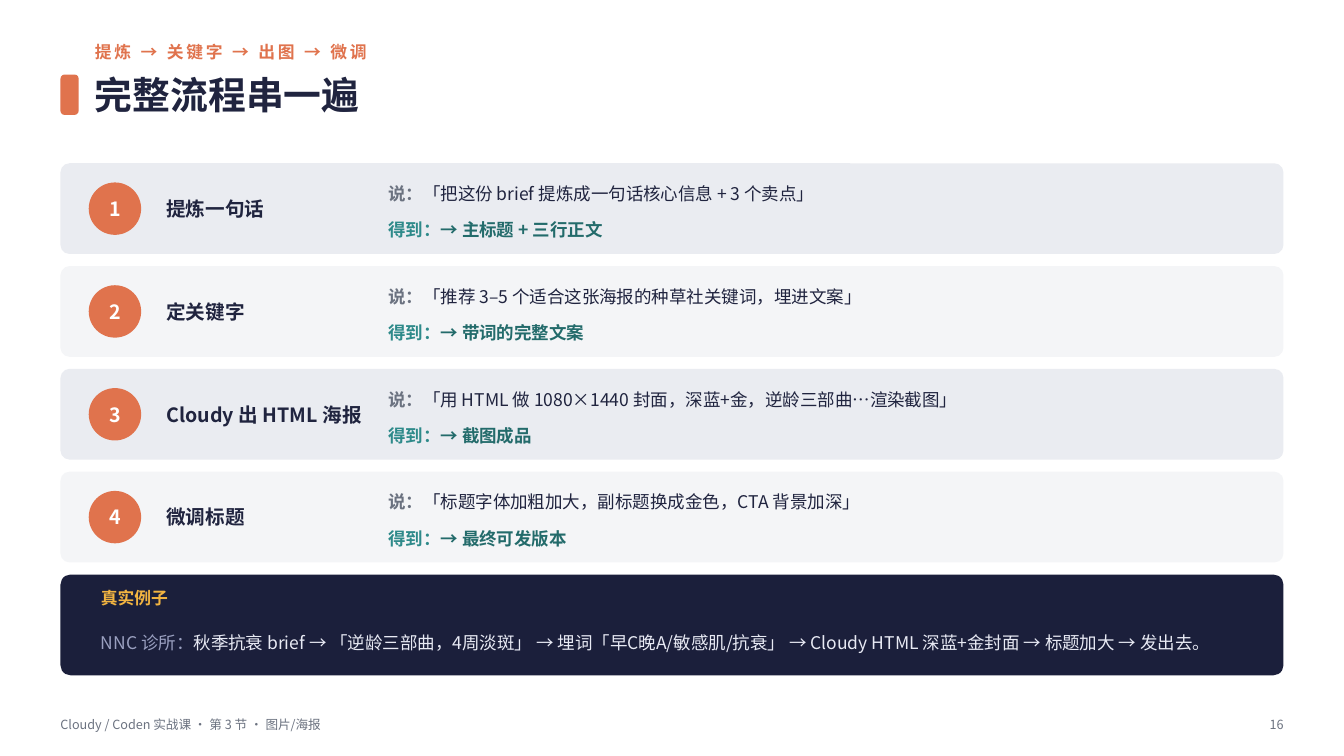
import pptx
import pptx.util
import pptx.dml.color
import pptx.enum.shapes
import pptx.enum.text
import pptx.oxml
import pptx.oxml.ns

Inches = pptx.util.Inches
RGBColor = pptx.dml.color.RGBColor
SHAPE = pptx.enum.shapes.MSO_SHAPE
ALIGN = pptx.enum.text.PP_ALIGN

FONT = "Noto Sans CJK SC"
ORANGE = RGBColor(0xE0, 0x73, 0x4D)
INK = RGBColor(0x20, 0x24, 0x3F)
WHITE = RGBColor(0xFF, 0xFF, 0xFF)
GRAY = RGBColor(0x6B, 0x72, 0x80)
TEAL = RGBColor(0x2E, 0x8A, 0x8A)
DARK_TEAL = RGBColor(0x23, 0x6B, 0x6B)
ROW_FILLS = [RGBColor(0xEA, 0xEC, 0xF1), RGBColor(0xF4, 0xF5, 0xF7)]
NAVY = RGBColor(0x1B, 0x1F, 0x3B)
GOLD = RGBColor(0xF2, 0xB4, 0x41)
LAVENDER = RGBColor(0x9A, 0xA0, 0xC0)
PALE = RGBColor(0xE8, 0xEA, 0xF4)

LEFT, WIDTH = 0.6, 12.13
ROW_TOP, ROW_HEIGHT, ROW_STEP = 1.62, 0.9, 1.02
CIRCLE = 0.52

prs = pptx.Presentation()
prs.slide_width, prs.slide_height = Inches(13.33), Inches(7.5)
s = prs.slides.add_slide(prs.slide_layouts[6])


def add_block(kind, x, y, w, h, fill, corner=None):
    sp = s.shapes.add_shape(kind, Inches(x), Inches(y), Inches(w), Inches(h))
    sp.shadow.inherit = False
    sp.fill.solid()
    sp.fill.fore_color.rgb = fill
    sp.line.fill.background()
    if corner is not None:
        sp.adjustments[0] = corner
    return sp


def add_text(x, y, w, h, size, runs, align=ALIGN.LEFT, sp=None):
    """Write (text, colour, bold) runs into sp, or into a new text box; return the paragraph."""
    if sp is None:
        sp = s.shapes.add_textbox(Inches(x), Inches(y), Inches(w), Inches(h))
    tf = sp.text_frame
    settings = {"word_wrap": True, "vertical_anchor": pptx.enum.text.MSO_ANCHOR.MIDDLE,
                "margin_left": 0, "margin_right": 0, "margin_top": 0, "margin_bottom": 0}
    for name, value in settings.items():
        setattr(tf, name, value)
    p = tf.paragraphs[0]
    p.alignment = align
    for text, color, bold in runs:
        r = p.add_run()
        r.text = text
        for name, value in {"size": pptx.util.Pt(size), "bold": bold, "name": FONT}.items():
            setattr(r.font, name, value)
        r.font.color.rgb = color
        ea = pptx.oxml.parse_xml(f'<a:ea {pptx.oxml.ns.nsdecls("a")} typeface="{FONT}"/>')
        r.font._element.append(ea)
    return p


# Heading
p = add_text(0.94, 0.36, 11.79, 0.3, 12, [("提炼 → 关键字 → 出图 → 微调", ORANGE, True)])
p.runs[0].font._element.set("spc", "200")
add_block(SHAPE.ROUNDED_RECTANGLE, LEFT, 0.74, 0.18, 0.4, ORANGE, 0.22)
add_text(0.94, 0.64, 11.79, 0.6, 27, [("完整流程串一遍", INK, True)])

# Steps: name, prompt, outcome
steps = [
    ("提炼一句话", "「把这份 brief 提炼成一句话核心信息 + 3 个卖点」", "→ 主标题 + 三行正文"),
    ("定关键字", "「推荐 3–5 个适合这张海报的种草社关键词，埋进文案」", "→ 带词的完整文案"),
    ("Cloudy 出 HTML 海报", "「用 HTML 做 1080×1440 封面，深蓝+金，逆龄三部曲…渲染截图」",
     "→ 截图成品"),
    ("微调标题", "「标题字体加粗加大，副标题换成金色，CTA 背景加深」", "→ 最终可发版本"),
]
for i, (name, prompt, outcome) in enumerate(steps):
    y = ROW_TOP + i * ROW_STEP
    add_block(SHAPE.ROUNDED_RECTANGLE, LEFT, y, WIDTH, ROW_HEIGHT, ROW_FILLS[i % 2], 0.1)
    badge = (0.88, y + (ROW_HEIGHT - CIRCLE) / 2, CIRCLE, CIRCLE)
    circle = add_block(SHAPE.OVAL, *badge, ORANGE)
    add_text(*badge, 14, [(str(i + 1), WHITE, True)], ALIGN.CENTER, circle)
    add_text(1.65, y, 2.1, ROW_HEIGHT, 14, [(name, INK, True)])
    add_text(3.85, y + 0.1, 7, 0.4, 12.5, [("说：", GRAY, True), (prompt, INK, False)])
    add_text(3.85, y + 0.5, 7, 0.32, 12.5, [("得到：", TEAL, True), (outcome, DARK_TEAL, True)])

# Worked example
add_block(SHAPE.ROUNDED_RECTANGLE, LEFT, 5.7, WIDTH, 1, NAVY, 0.1)
add_text(1, 5.78, 2, 0.3, 12, [("真实例子", GOLD, True)])
example = ("秋季抗衰 brief → 「逆龄三部曲，4周淡斑」 → 埋词「早C晚A/敏感肌/抗衰」 → "
           "Cloudy HTML 深蓝+金封面 → 标题加大 → 发出去。")
p = add_text(1, 6.12, 11.33, 0.48, 12.5,
             [("NNC 诊所：", LAVENDER, False), (example, PALE, False)])
p.line_spacing = 1.1

# Footer
add_text(LEFT, 7.04, 9, 0.3, 9, [("Cloudy / Coden 实战课 · 第 3 节 · 图片/海报", GRAY, False)])
add_text(12.03, 7.04, 0.7, 0.3, 9, [("16", GRAY, False)], ALIGN.RIGHT)

prs.save("out.pptx")
